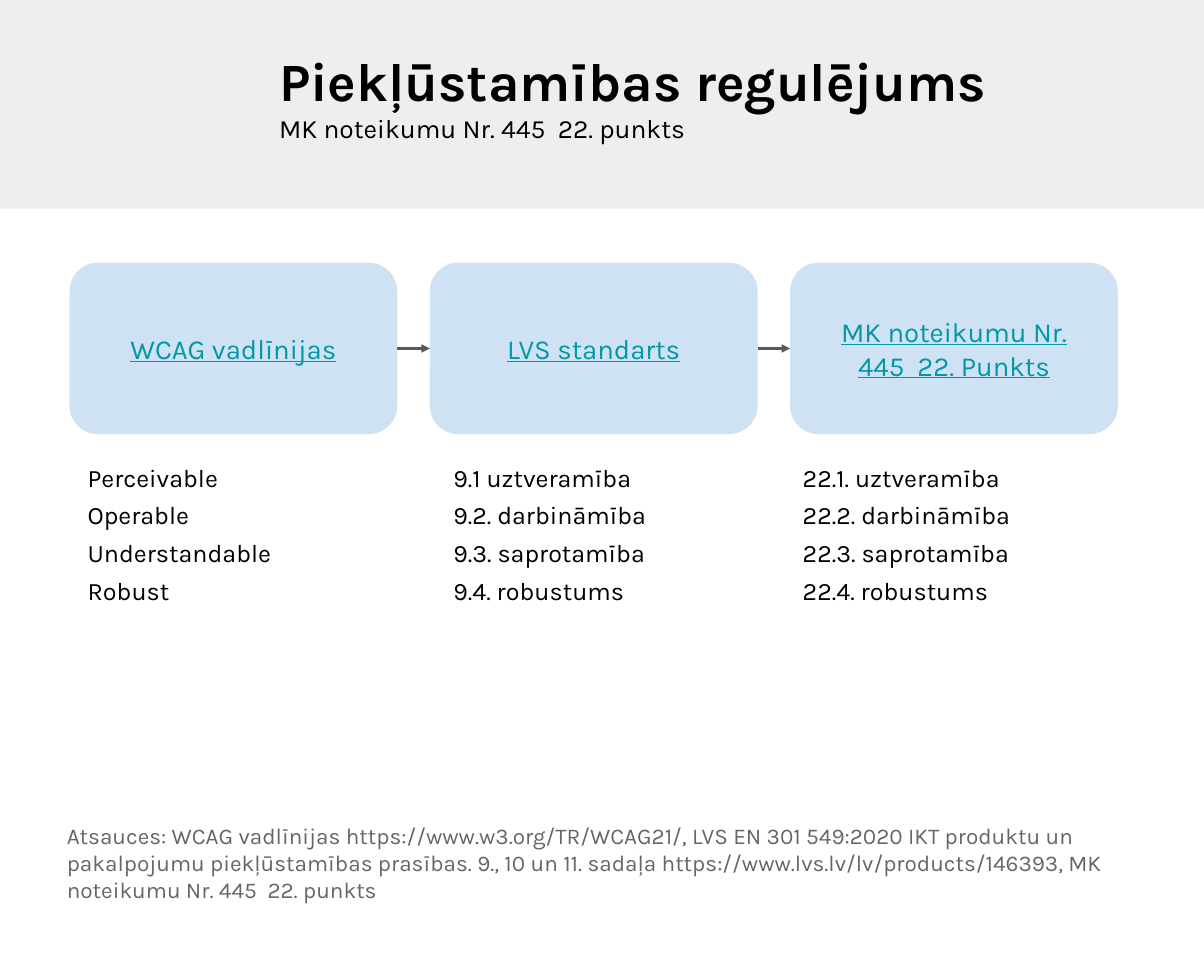
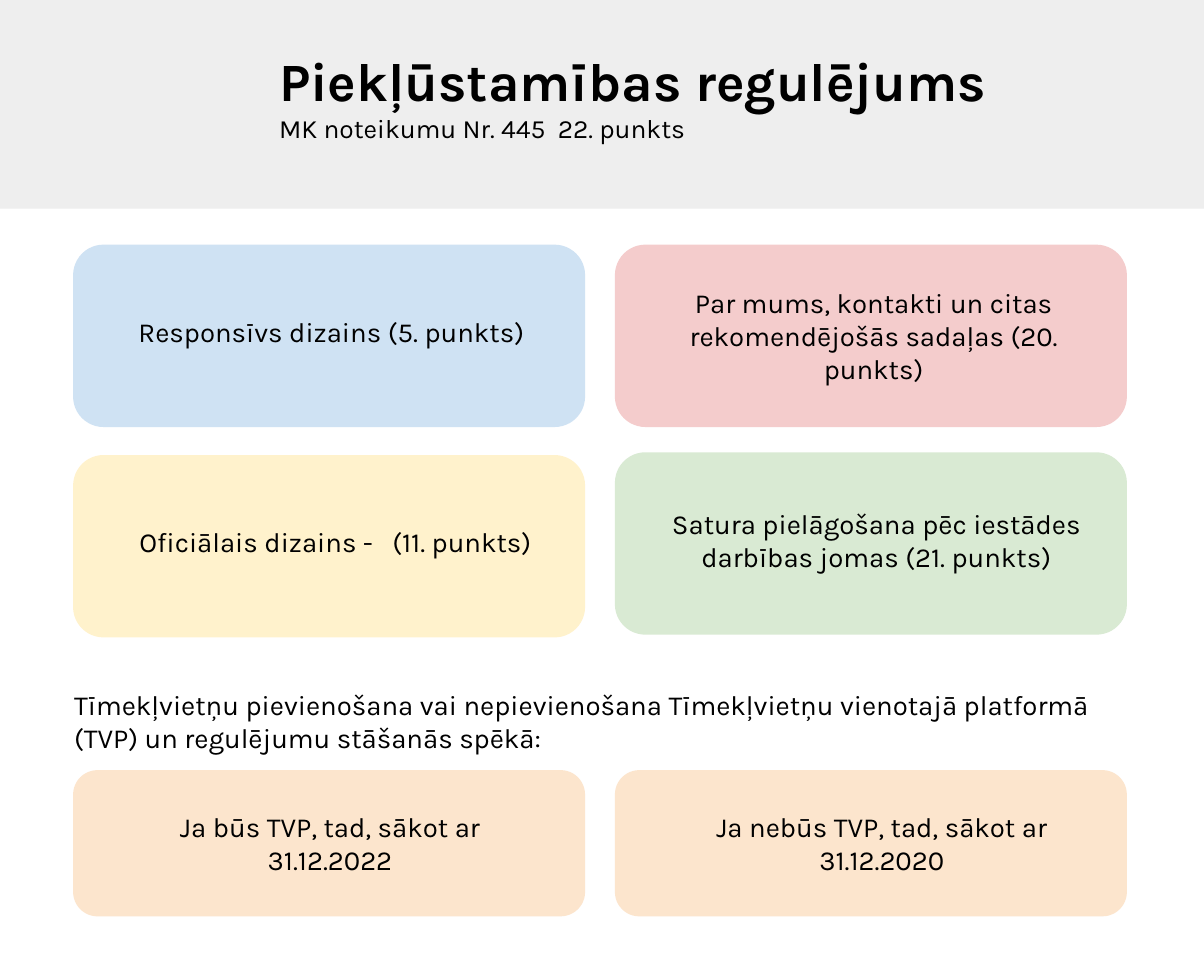
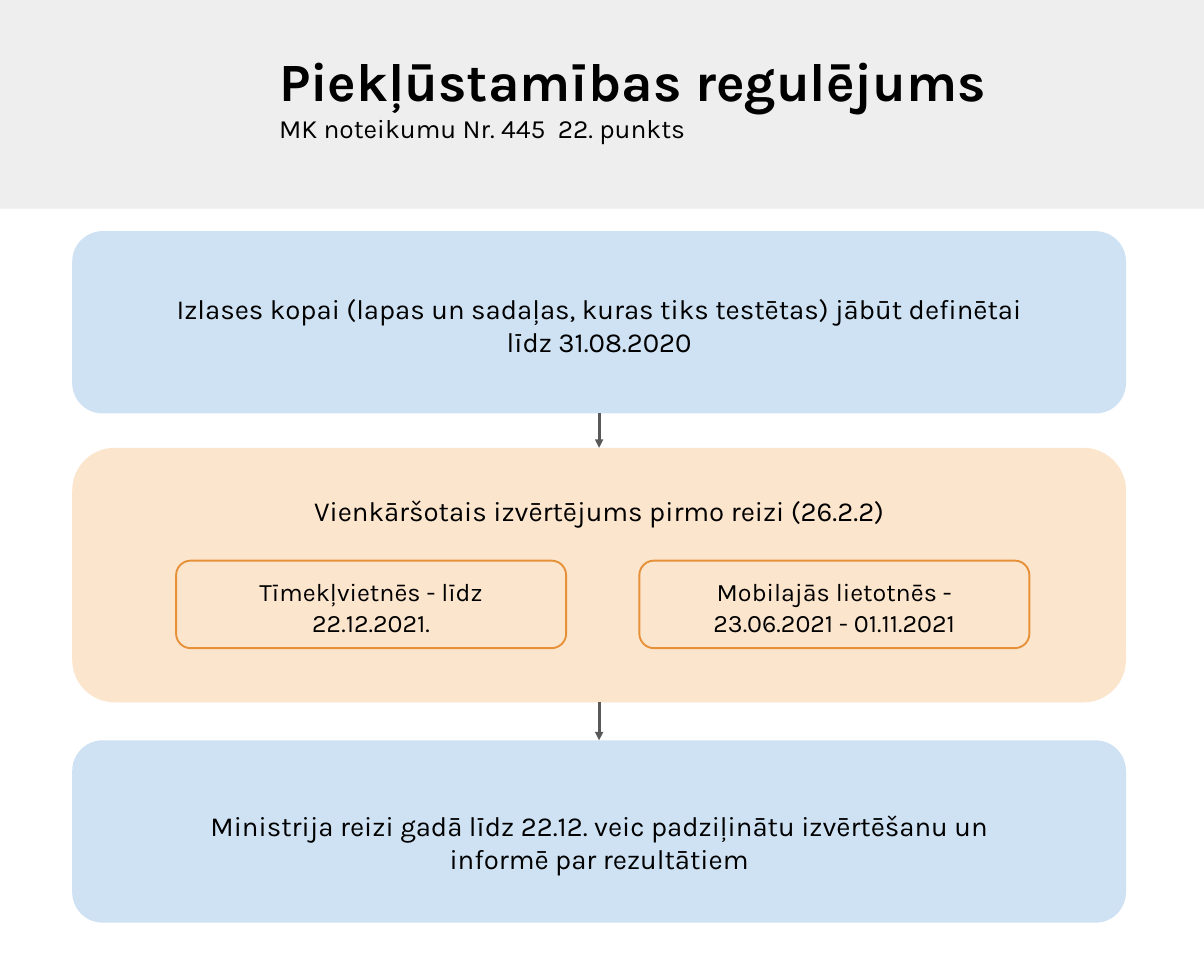
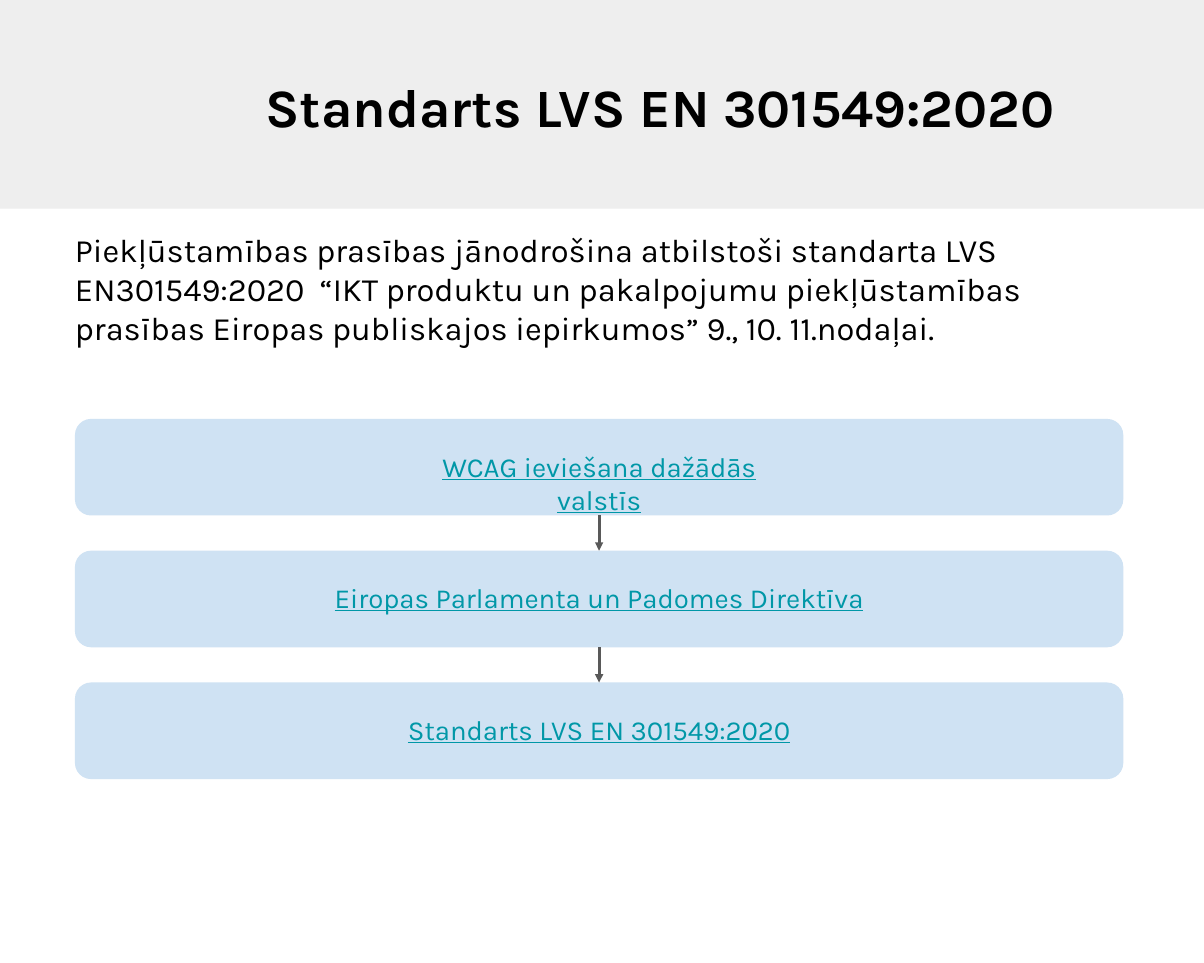
from lxml.etree import SubElement
from pptx import Presentation
from pptx.dml.color import RGBColor
from pptx.enum.shapes import MSO_CONNECTOR, MSO_SHAPE
from pptx.enum.text import MSO_ANCHOR, PP_ALIGN
from pptx.oxml.ns import qn
from pptx.util import Inches, Pt

FONT = "Karla"
BLACK = RGBColor(0x00, 0x00, 0x00)
GREY = RGBColor(0x66, 0x66, 0x66)
DARK = RGBColor(0x59, 0x59, 0x59)
BAND = RGBColor(0xEE, 0xEE, 0xEE)
TEAL = RGBColor(0x00, 0x97, 0xA7)
BLUE = RGBColor(0xCF, 0xE2, 0xF3)
PINK = RGBColor(0xF4, 0xCC, 0xCC)
CREAM = RGBColor(0xFF, 0xF2, 0xCC)
GREEN = RGBColor(0xD9, 0xEA, 0xD3)
PEACH = RGBColor(0xFC, 0xE5, 0xCD)
ORANGE = RGBColor(0xE6, 0x91, 0x38)

WIDTH, HEIGHT = 40 / 3, 32 / 3
ROUND = 0.167
TITLE_SIZE = 43

TITLE = "Piekļūstamības regulējums"
SUBTITLE = "MK noteikumu Nr. 445  22. punkts"

# card text, list left, list
SOURCES = [
    ("WCAG vadlīnijas", 0.77,
     ["Perceivable", "Operable", "Understandable", "Robust"]),
    ("LVS standarts", 4.82,
     ["9.1 uztveramība", "9.2. darbināmība", "9.3. saprotamība",
      "9.4. robustums"]),
    ("MK noteikumu Nr. 445  22. Punkts", 8.69,
     ["22.1. uztveramība", "22.2. darbināmība", "22.3. saprotamība",
      "22.4. robustums"]),
]
REFERENCES = (
    "Atsauces: WCAG vadlīnijas https://www.w3.org/TR/WCAG21/, "
    "LVS EN 301 549:2020 IKT produktu un pakalpojumu piekļūstamības prasības. "
    "9., 10 un 11. sadaļa https://www.lvs.lv/lv/products/146393, "
    "MK noteikumu Nr. 445  22. punkts")

# column, top, height, fill, text, side insets, text top
POINTS = [
    (0, 2.71, 2.02, BLUE, "Responsīvs dizains (5. punkts)", (0.63, 0.58), 0.78),
    (1, 2.71, 2.02, PINK,
     "Par mums, kontakti un citas rekomendējošās sadaļas (20. punkts)",
     (0.63, 0.57), None),
    (0, 5.04, 2.02, CREAM, "Oficiālais dizains -   (11. punkts)",
     (0.63, 0.49), 0.77),
    (1, 5.01, 2.02, GREEN,
     "Satura pielāgošana pēc iestādes darbības jomas (21. punkts)",
     (0.62, 0.5), 0.6),
    (0, 8.53, 1.62, PEACH, "Ja būs TVP, tad, sākot ar 31.12.2022",
     (0.62, 0.6), None),
    (1, 8.53, 1.62, PEACH, "Ja nebūs TVP, tad, sākot ar 31.12.2020",
     (0.73, 0.49), None),
]
PLATFORM = ("Tīmekļvietņu pievienošana vai nepievienošana Tīmekļvietņu "
            "vienotajā platformā (TVP) un regulējumu stāšanās spēkā:")

# top, height, fill, text, text top
STAGES = [
    (2.56, 2.02, BLUE,
     "Izlases kopai (lapas un sadaļas, kuras tiks testētas) jābūt definētai "
     "līdz 31.08.2020", 0.67),
    (4.96, 2.82, PEACH, "Vienkāršotais izvērtējums pirmo reizi (26.2.2)", 0.51),
    (8.2, 2.02, BLUE,
     "Ministrija reizi gadā līdz 22.12. veic padziļinātu izvērtēšanu un "
     "informē par rezultātiem", 0.76),
]
DEADLINES = ["Tīmekļvietnēs - līdz 22.12.2021.",
             "Mobilajās lietotnēs - 23.06.2021 - 01.11.2021"]

STANDARD = "Standarts LVS EN 301549:2020"
DEMAND = (
    "Piekļūstamības prasības jānodrošina atbilstoši standarta LVS "
    "EN301549:2020  “IKT produktu un pakalpojumu piekļūstamības prasības "
    "Eiropas publiskajos iepirkumos” 9., 10. 11.nodaļai.")
# text, side inset
LEVELS = [("WCAG ieviešana dažādās valstīs", 3.57),
          ("Eiropas Parlamenta un Padomes Direktīva", 1.2),
          (STANDARD, 3.57)]


def inches(*values):
    return [Inches(value) for value in values]


def write(par, text, size, color=BLACK, bold=False, underline=False):
    run = par.add_run()
    run.text = text
    font = run.font
    font.name, font.size, font.bold = FONT, Pt(size), bold
    font.color.rgb = color
    if underline:
        font.underline = True


def set_insets(frame, left, top, right, bottom):
    frame.margin_left, frame.margin_top = inches(left, top)
    frame.margin_right, frame.margin_bottom = inches(right, bottom)
    frame.word_wrap = True


def add_text(slide, box, lines, inset=0.2, gap=0):
    """Add a text box; each line is (text, size) plus options for write."""
    frame = slide.shapes.add_textbox(*inches(*box)).text_frame
    set_insets(frame, inset, inset, inset, inset)
    for index, (text, size, options) in enumerate(lines):
        par = frame.add_paragraph() if index else frame.paragraphs[0]
        if index and gap:
            par.space_before = Pt(gap)
        write(par, text, size, **options)


def add_card(slide, box, fill, text, sides, top=None, size=22, line=None,
             link=False):
    """Add a rounded card; text is centred, or starts at top when given."""
    card = slide.shapes.add_shape(MSO_SHAPE.ROUNDED_RECTANGLE, *inches(*box))
    card.adjustments[0] = ROUND
    card.shadow.inherit = False
    card.fill.solid()
    card.fill.fore_color.rgb = fill
    if line:
        card.line.color.rgb = line
        card.line.width = Pt(1.5)
    else:
        card.line.fill.background()
    # The text area of a rounded rectangle already starts inside its corners.
    corner = 0.29 * ROUND * min(box[2:])
    frame = card.text_frame
    set_insets(frame, sides[0] - corner, (top - corner) if top else 0,
               sides[1] - corner, 0)
    frame.vertical_anchor = MSO_ANCHOR.TOP if top else MSO_ANCHOR.MIDDLE
    par = frame.paragraphs[0]
    par.alignment = PP_ALIGN.CENTER
    write(par, text, size, TEAL if link else BLACK, underline=link)
    return card


def join_cards(slide, cards, start, end):
    """Draw an arrow from each card's start side to the next one's end side."""
    for first, second in zip(cards, cards[1:]):
        arrow = slide.shapes.add_connector(MSO_CONNECTOR.STRAIGHT, 0, 0, 0, 0)
        arrow.begin_connect(first, start)
        arrow.end_connect(second, end)
        arrow.line.color.rgb = DARK
        arrow.line.width = Pt(2.25)
        SubElement(arrow.line._get_or_add_ln(), qn("a:tailEnd"), type="triangle")
        SubElement(arrow._element.spPr, qn("a:effectLst"))


def add_band(slide):
    """Put the header band on the slide's layout, for all slides to share."""
    band = slide.shapes.add_shape(MSO_SHAPE.RECTANGLE,
                                  *inches(0, 0, WIDTH, 2.31))
    band.shadow.inherit = False
    band.fill.solid()
    band.fill.fore_color.rgb = BAND
    band.line.fill.background()
    band._element.nvSpPr.cNvPr.set("id", "20")
    slide.slide_layout.shapes.element.append(band._element)


def add_heading(slide):
    add_text(slide, (2.94, 0.38, 10.24, 1.3),
             [(TITLE, TITLE_SIZE, {"bold": True}), (SUBTITLE, 21, {})], 0.15)


def fill_sources(slide):
    add_heading(slide)
    cards = []
    for index, (name, left, items) in enumerate(SOURCES):
        box = (0.77 + 3.99 * index, 2.91, 3.63, 1.9)
        cards.append(add_card(slide, box, BLUE, name, (0.43, 0.43), link=True))
        add_text(slide, (left, 4.92, 4.06, 1.93),
                 [(item, 20, {}) for item in items], gap=6)
    join_cards(slide, cards, 3, 1)
    add_text(slide, (0.54, 8.9, 12.26, 1.52),
             [(REFERENCES, 18, {"color": GREY})])


def fill_points(slide):
    add_heading(slide)
    for column, top, height, fill, text, sides, start in POINTS:
        box = (0.81 + 6 * column, top, 5.67, height)
        add_card(slide, box, fill, text, sides, start)
    add_text(slide, (0.62, 7.42, 11.92, 1.02), [(PLATFORM, 22, {})])


def fill_stages(slide):
    add_heading(slide)
    cards = [add_card(slide, (0.8, top, 11.67, height), fill, text,
                      (0.95, 0.95), start)
             for top, height, fill, text, start in STAGES]
    for index, text in enumerate(DEADLINES):
        add_card(slide, (1.95 + 5.13 * index, 6.21, 4.32, 0.97), PEACH, text,
                 (0.35, 0.35), 0.18, size=20, line=ORANGE)
    join_cards(slide, cards, 2, 0)


def fill_standard(slide):
    add_text(slide, (2.74, 0.61, 10.42, 0.97),
             [(STANDARD, TITLE_SIZE, {"bold": True})])
    add_text(slide, (0.68, 2.4, 11.95, 2.16), [(DEMAND, 26, {})], 0.15)
    cards = [add_card(slide, (0.83, 4.64 + 1.46 * index, 11.61, 1.07), BLUE,
                      text, (side, side), 0.34, link=True)
             for index, (text, side) in enumerate(LEVELS)]
    join_cards(slide, cards, 2, 0)


def main():
    prs = Presentation()
    prs.slide_width, prs.slide_height = inches(WIDTH, HEIGHT)
    blank = prs.slide_layouts[6]
    fills = [fill_sources, fill_points, fill_stages, fill_standard]
    for index, fill in enumerate(fills):
        slide = prs.slides.add_slide(blank)
        if index == 0:
            add_band(slide)
        fill(slide)
    prs.save("out.pptx")


if __name__ == "__main__":
    main()
